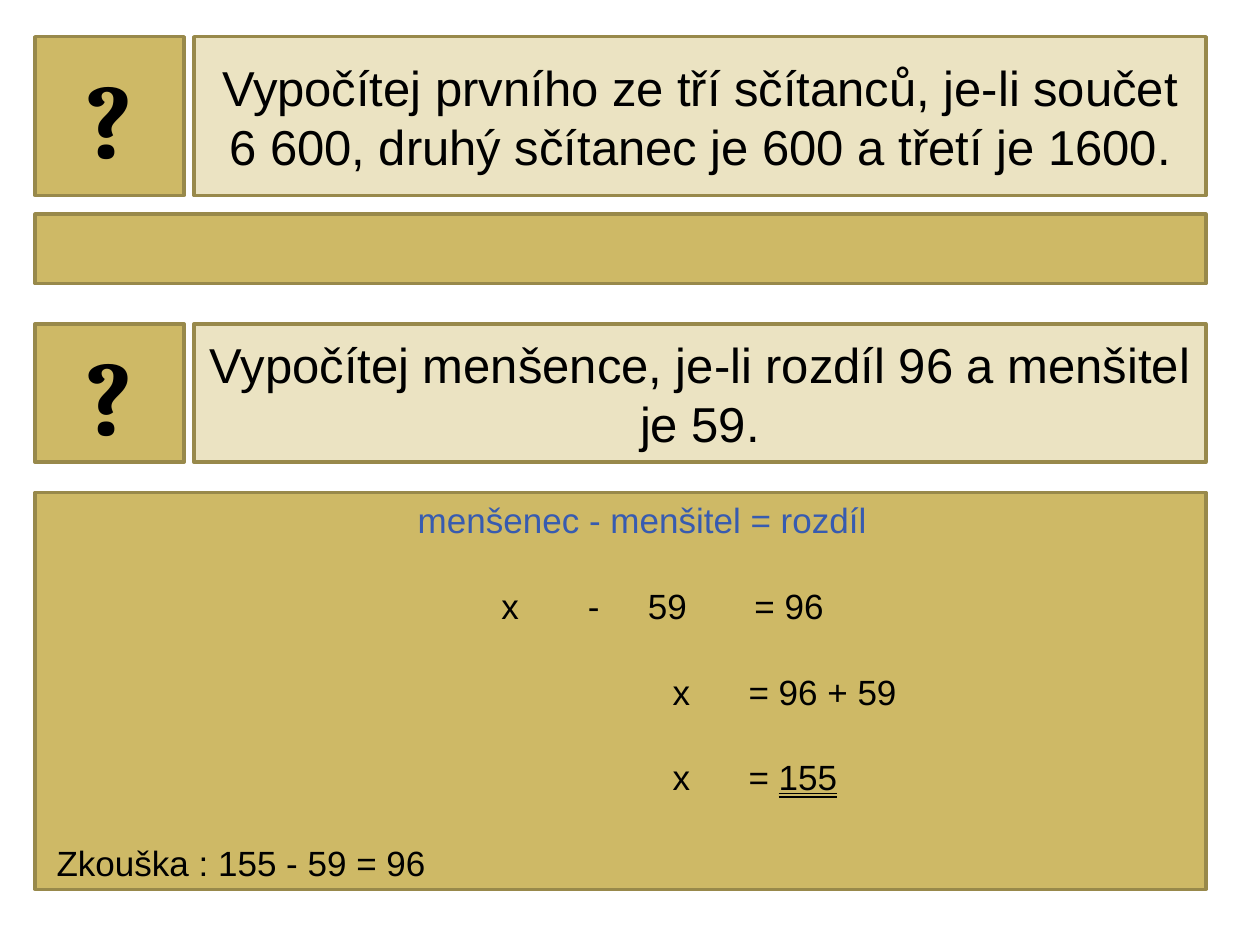
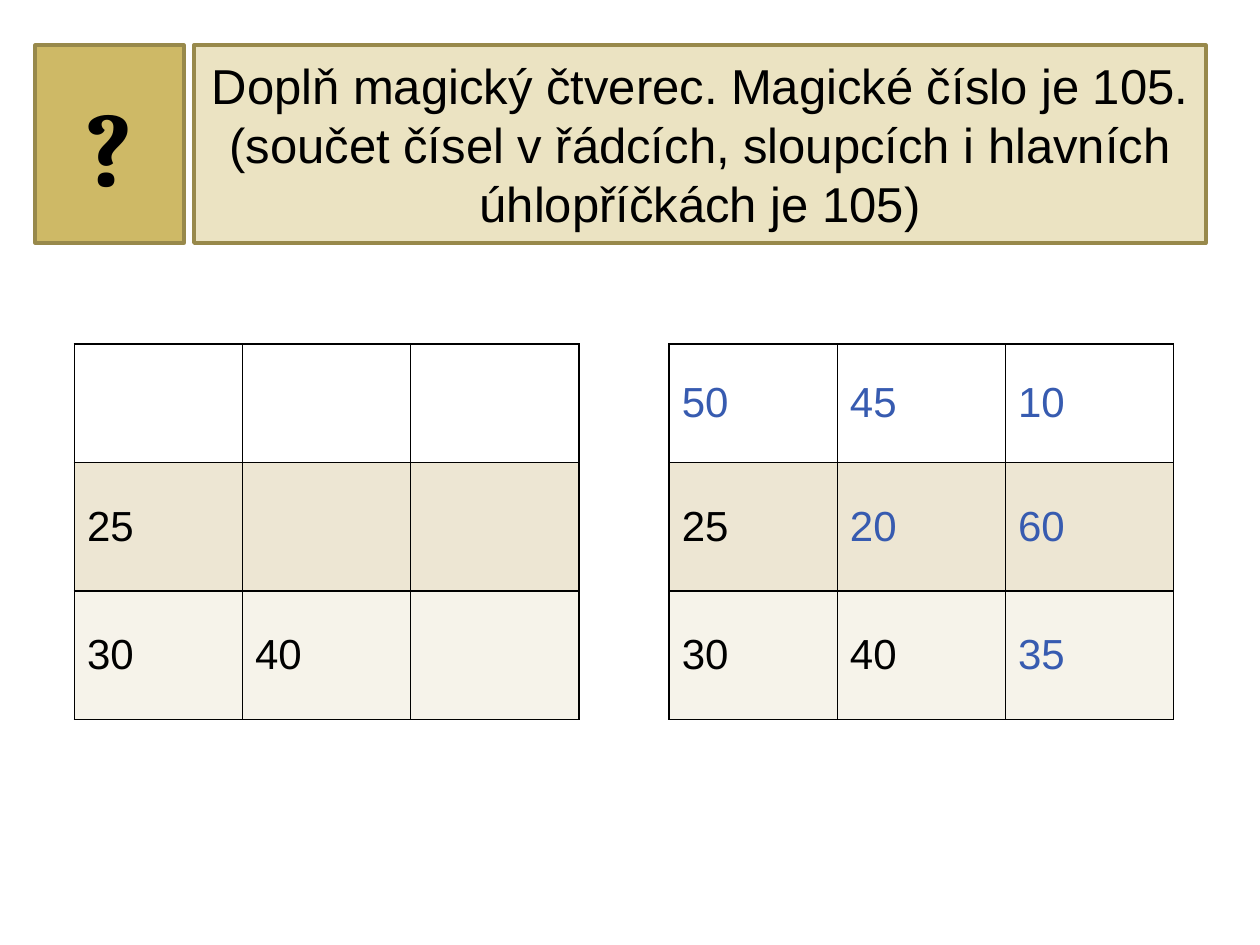
from lxml import etree
from pptx import Presentation
from pptx.dml.color import RGBColor
from pptx.enum.shapes import MSO_SHAPE
from pptx.enum.text import MSO_ANCHOR, MSO_AUTO_SIZE, MSO_UNDERLINE, PP_ALIGN
from pptx.oxml.ns import qn
from pptx.util import Cm, Pt

RECTANGLE = MSO_SHAPE.RECTANGLE
MIDDLE = MSO_ANCHOR.MIDDLE
CENTER = PP_ALIGN.CENTER
LEFT = PP_ALIGN.LEFT
DOUBLE_LINE = MSO_UNDERLINE.DOUBLE_LINE
NO_AUTOFIT = MSO_AUTO_SIZE.NONE

GOLD = "CEB966"
CREAM = "EBE3C2"
BORDER = "98894B"
BLACK = "000000"
BLUE = "375BB0"
ROW_FILLS = ["FFFFFF", "EDE6D3", "F6F3EA"]

MARGIN = 0.71
FULL_WIDTH = 23.6
MARK_WIDTH = 3
QUESTION_LEFT = 3.91
QUESTION_WIDTH = 20.4


def style_panel(shape, left, top, width, height, fill):
    shape.left, shape.top = Cm(left), Cm(top)
    shape.width, shape.height = Cm(width), Cm(height)
    shape.shadow.inherit = False
    shape.fill.solid()
    shape.fill.fore_color.rgb = RGBColor.from_string(fill)
    shape.line.color.rgb = RGBColor.from_string(BORDER)
    shape.line.width = Pt(2)
    frame = shape.text_frame
    frame.word_wrap = True
    frame.auto_size = NO_AUTOFIT
    frame.vertical_anchor = MIDDLE
    return frame


def add_span(para, text, size, color=BLACK, font="Arial", bold=False):
    span = para.add_run()
    span.text = text
    span.font.size = Pt(size)
    span.font.name = font
    span.font.bold = bold
    span.font.color.rgb = RGBColor.from_string(color)
    return span


deck = Presentation()
deck.slide_width = Cm(25.4)
deck.slide_height = Cm(19.05)
title_only = deck.slide_layouts[5]

slide_questions = [
    [
        (0.74, 3.2, ["Vypočítej prvního ze tří sčítanců, je-li součet "
                     "6 600, druhý sčítanec je 600 a třetí je 1600."]),
        (6.53, 2.79, ["Vypočítej menšence, je-li rozdíl 96 a menšitel je 59."]),
    ],
    [
        (0.91, 3.99, ["Doplň magický čtverec. Magické číslo je 105.",
                      "(součet čísel v řádcích, sloupcích i hlavních "
                      "úhlopříčkách je 105)"]),
    ],
]

pages = []
for questions in slide_questions:
    page = deck.slides.add_slide(title_only)
    pages.append(page)
    for number, (top, height, lines) in enumerate(questions):
        mark = page.shapes.add_shape(RECTANGLE, 0, 0, 0, 0)
        frame = style_panel(mark, MARGIN, top, MARK_WIDTH, height, GOLD)
        frame.paragraphs[0].alignment = CENTER
        add_span(frame.paragraphs[0], "?", 60, font="Cambria", bold=True)

        if number == 0:
            box = page.shapes.title
        else:
            box = page.shapes.add_shape(RECTANGLE, 0, 0, 0, 0)
        frame = style_panel(box, QUESTION_LEFT, top, QUESTION_WIDTH, height, CREAM)
        for index, line in enumerate(lines):
            para = frame.add_paragraph() if index else frame.paragraphs[0]
            para.alignment = CENTER
            add_span(para, line, 28)

equation_page, square_page = pages

empty_answer = equation_page.shapes.add_shape(RECTANGLE, 0, 0, 0, 0)
style_panel(empty_answer, MARGIN, 4.32, FULL_WIDTH, 1.4, GOLD)

solution = equation_page.shapes.add_shape(RECTANGLE, 0, 0, 0, 0)
frame = style_panel(solution, MARGIN, 9.93, FULL_WIDTH, 8, GOLD)
solution_lines = [
    ([7.46], ["menšenec - menšitel = rozdíl"], BLUE),
    ([9.15, 10.89, 12.1, 14.25], ["x", "-", "59", "= 96"], BLACK),
    ([12.6, 14.13], ["x", "= 96 + 59"], BLACK),
    ([12.6, 14.13], ["x", "= "], BLACK),
    ([0.18], ["Zkouška : 155 - 59 = 96"], BLACK),
]
for index, (stops, parts, color) in enumerate(solution_lines):
    para = frame.add_paragraph() if index else frame.paragraphs[0]
    para.alignment = LEFT
    para.space_before = Pt(25 if index else 0)
    tab_list = etree.SubElement(para._p.get_or_add_pPr(), qn("a:tabLst"))
    for stop in stops:
        etree.SubElement(tab_list, qn("a:tab"), pos=str(Cm(stop)), algn="l")
    for part in parts:
        add_span(para, "\t" + part, 20, color)
    if parts[-1] == "= ":
        add_span(para, "155", 20).font.underline = DOUBLE_LINE

solved_square = [[50, 45, 10], [25, 20, 60], [30, 40, 35]]
given_cells = {(1, 0), (2, 0), (2, 1)}
row_heights = [2.39, 2.59, 2.59]

for left, solved in [(1.5, False), (13.49, True)]:
    graphic = square_page.shapes.add_table(
        3, 3, Cm(left), Cm(6.93), Cm(10.16), Cm(sum(row_heights)))
    square = graphic.table
    square.first_row = False
    square.horz_banding = False
    for column in square.columns:
        column.width = Cm(3.39)
    for row, values in enumerate(solved_square):
        square.rows[row].height = Cm(row_heights[row])
        for column, value in enumerate(values):
            cell = square.cell(row, column)
            cell.vertical_anchor = MIDDLE
            given = (row, column) in given_cells
            if given or solved:
                add_span(cell.text_frame.paragraphs[0], str(value), 24,
                         BLACK if given else BLUE)
            properties = cell._tc.get_or_add_tcPr()
            for side in ["a:lnL", "a:lnR", "a:lnT", "a:lnB"]:
                edge = etree.SubElement(properties, qn(side), w=str(Pt(1)))
                edge_fill = etree.SubElement(edge, qn("a:solidFill"))
                etree.SubElement(edge_fill, qn("a:srgbClr"), val=BLACK)
            cell.fill.solid()
            cell.fill.fore_color.rgb = RGBColor.from_string(ROW_FILLS[row])

deck.save("out.pptx")
